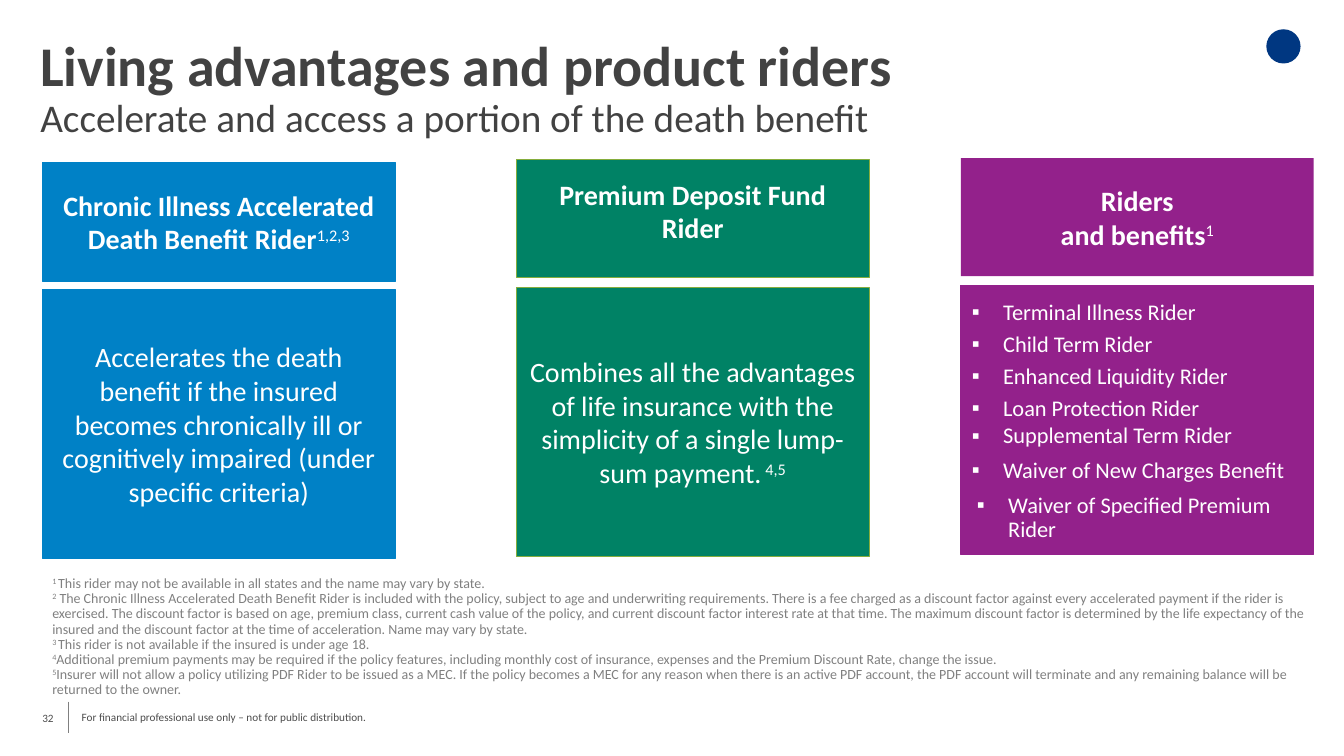
"""Build the slide on living advantages and product riders."""
from dataclasses import dataclass, field
from typing import Any

from lxml.etree import SubElement
from pptx import Presentation
from pptx.dml.color import RGBColor
from pptx.enum.shapes import MSO_CONNECTOR, MSO_SHAPE
from pptx.enum.text import MSO_ANCHOR, MSO_AUTO_SIZE, PP_ALIGN
from pptx.oxml.ns import qn
from pptx.util import Inches, Pt

SLIDE_W, SLIDE_H = Inches(13.33), Inches(7.5)


@dataclass(frozen=True)
class Theme:
    font: str = "Calibri"
    white: str = "FFFFFF"
    heading: str = "424242"
    footer: str = "4D4D4D"
    grey: str = "808080"
    navy: str = "003781"
    blue: str = "0081C6"
    green: str = "008265"
    olive: str = "85AD3D"
    purple: str = "93218B"
    title_size: int = 40
    subtitle_size: int = 28
    card_size: int = 20
    list_size: int = 16
    note_size: int = 10
    footer_size: int = 8
    outline: float = 0.85
    rule: float = 0.75


THEME = Theme()


@dataclass(frozen=True)
class Area:
    """Hold a place as percentages of the slide's width and height."""
    x: float
    y: float
    w: float
    h: float

    def emu(self) -> tuple[int, int, int, int]:
        return (round(SLIDE_W * self.x / 100), round(SLIDE_H * self.y / 100),
                round(SLIDE_W * self.w / 100), round(SLIDE_H * self.h / 100))


@dataclass(frozen=True)
class Span:
    text: str
    size: float
    color: str = THEME.white
    bold: bool = False
    raised: bool = False


@dataclass(frozen=True)
class Para:
    spans: list[Span]
    format: dict[str, Any] = field(default_factory=dict)
    indent: float = 0


@dataclass(frozen=True)
class Card:
    area: Area
    fill: str
    line: str | None
    paras: list[Para]
    frame: dict[str, Any] = field(default_factory=dict)


@dataclass(frozen=True)
class Rider:
    name: str
    space: float
    indent: float = 0.31


def assign(target: Any, values: dict[str, Any]) -> None:
    """Set each format value on the target."""
    for name, value in values.items():
        setattr(target, name, value)


def add_bullet(paragraph: Any, indent: float) -> None:
    """Give a paragraph a square bullet with a hanging indent."""
    props = paragraph._p.get_or_add_pPr()
    props.set("marL", str(Inches(indent)))
    props.set("indent", str(-Inches(0.31)))
    SubElement(props, qn("a:buChar")).set("char", "▪")


def write(shape: Any, paras: list[Para], frame: dict[str, Any]) -> None:
    """Fill a shape with formatted paragraphs."""
    text_frame = shape.text_frame
    assign(text_frame, {"word_wrap": True, "auto_size": MSO_AUTO_SIZE.NONE} | frame)
    for index, para in enumerate(paras):
        paragraph = text_frame.add_paragraph() if index else text_frame.paragraphs[0]
        if para.indent:
            add_bullet(paragraph, para.indent)
        assign(paragraph, para.format)
        for span in para.spans:
            if span.text == "\n":
                paragraph.add_line_break()
                continue
            run = paragraph.add_run()
            run.text = span.text
            assign(run.font, {"name": THEME.font, "size": Pt(span.size), "bold": span.bold})
            run.font.color.rgb = RGBColor.from_string(span.color)
            if span.raised:
                run._r.get_or_add_rPr().set("baseline", "30000")


def paint(shape: Any, fill: str, line: str | None) -> None:
    """Set a shape's fill and outline."""
    shape.fill.solid()
    shape.fill.fore_color.rgb = RGBColor.from_string(fill)
    if line is None:
        shape.line.fill.background()
        return
    shape.line.color.rgb = RGBColor.from_string(line)
    shape.line.width = Pt(THEME.outline)


def place(shape: Any, area: Area) -> None:
    """Move a placeholder to an area."""
    assign(shape, dict(zip(("left", "top", "width", "height"), area.emu())))


def add_card(slide: Any, card: Card) -> None:
    """Draw one filled rectangle with its text."""
    shape = slide.shapes.add_shape(MSO_SHAPE.RECTANGLE, *card.area.emu())
    shape.shadow.inherit = False
    paint(shape, card.fill, card.line)
    write(shape, card.paras, {"vertical_anchor": MSO_ANCHOR.MIDDLE} | card.frame)


def add_text(slide: Any, area: Area, paras: list[Para], frame: dict[str, Any]) -> None:
    """Add a text box."""
    write(slide.shapes.add_textbox(*area.emu()), paras, frame)


def centred(text: str, mark: str = "", bold: bool = False) -> Para:
    """Make a centred card paragraph with an optional note mark."""
    spans = [Span(text, THEME.card_size, bold=bold)]
    if mark:
        spans.append(Span(mark, THEME.card_size, raised=True))
    return Para(spans, {"alignment": PP_ALIGN.CENTER})


COL_X, COL_W, HEAD_H, BODY_H = (3.15, 38.41, 71.49), 26.26, 15.6, 35.6
CARDS = [
    Card(Area(COL_X[0], 21.47, COL_W, 15.73), THEME.blue, THEME.blue,
         [centred("Chronic Illness Accelerated Death Benefit Rider", "1,2,3", True)]),
    Card(Area(COL_X[1], 21.07, COL_W, HEAD_H), THEME.green, THEME.olive,
         [centred("Premium Deposit Fund Rider", bold=True)], {"margin_bottom": Inches(0.2)}),
    Card(Area(COL_X[2], 20.93, COL_W, HEAD_H), THEME.purple, None,
         [centred("Riders", bold=True), centred("and benefits", "1", True)]),
    Card(Area(COL_X[0], 38.27, COL_W, BODY_H), THEME.blue, THEME.blue,
         [centred("Accelerates the death benefit if the insured becomes chronically ill "
                  "or cognitively impaired (under specific criteria)")]),
    Card(Area(COL_X[1], 38, COL_W, BODY_H), THEME.green, THEME.olive,
         [centred("Combines all the advantages of life insurance with the simplicity "
                  "of a single lump-sum payment.", " 4,5")]),
]
RIDERS = [
    Rider("Terminal Illness Rider", 0), Rider("Child Term Rider", 5.5),
    Rider("Enhanced Liquidity Rider", 5.5), Rider("Loan Protection Rider", 5.5),
    Rider("Supplemental Term Rider", 2.5), Rider("Waiver of New Charges Benefit", 7.5),
    Rider("Waiver of Specified Premium Rider", 7.5, 0.36),
]
NOTES = [
    ("1 ", "This rider may not be available in all states and the name may vary by state."),
    ("2", " The Chronic Illness Accelerated Death Benefit Rider is included with the policy, subject to age and underwriting requirements. There is a fee charged as a discount factor against every accelerated payment if the rider is exercised. The discount factor is based on age, premium class, current cash value of the policy, and current discount factor interest rate at that time. The maximum discount factor is determined by the life expectancy of the insured and the discount factor at the time of acceleration. Name may vary by state."),
    ("3 ", "This rider is not available if the insured is under age 18."),
    ("4", "Additional premium payments may be required if the policy features, including monthly cost of insurance, expenses and the Premium Discount Rate, change the issue."),
    ("5", "Insurer will not allow a policy utilizing PDF Rider to be issued as a MEC. If the policy becomes a MEC for any reason when there is an active PDF account, the PDF account will terminate and any remaining balance will be returned to the owner."),
]


def add_footer(slide: Any) -> None:
    """Draw the page number, its divider and the use notice."""
    margins = {"margin_left": 0, "margin_top": Inches(0.06), "margin_bottom": Inches(0.06)}
    for area, text, anchor in (
            (Area(6.08, 93.2, 89.35, 3.47),
             "For financial professional use only – not for public distribution.", MSO_ANCHOR.TOP),
            (Area(3.15, 92.27, 3, 5.33), "32", MSO_ANCHOR.MIDDLE)):
        add_text(slide, area, [Para([Span(text, THEME.footer_size, THEME.footer)])],
                 margins | {"margin_right": 0, "vertical_anchor": anchor})
    x, y, _, length = Area(5.1, 92.8, 0, 4.13).emu()
    divider = slide.shapes.add_connector(MSO_CONNECTOR.STRAIGHT, x, y, x, y + length)
    divider.line.color.rgb = RGBColor.from_string(THEME.grey)
    divider.line.width = Pt(THEME.rule)
    SubElement(divider._element.spPr, qn("a:effectLst"))


def main() -> None:
    """Compose and save the slide."""
    deck = Presentation()
    assign(deck, {"slide_width": SLIDE_W, "slide_height": SLIDE_H})
    slide = deck.slides.add_slide(deck.slide_layouts[1])
    title, rider_list = slide.placeholders
    place(title, Area(2.25, 4.4, 89.87, 14.53))
    write(title, [Para([
        Span("Living advantages and product riders", THEME.title_size, THEME.heading, True),
        Span("\n", THEME.title_size),
        Span("Accelerate and access a portion of the death benefit", THEME.subtitle_size, THEME.heading),
    ], {"alignment": PP_ALIGN.LEFT, "line_spacing": 0.9})], {"vertical_anchor": MSO_ANCHOR.TOP})
    place(rider_list, Area(COL_X[2], 37.73, COL_W, BODY_H))
    paint(rider_list, THEME.purple, THEME.purple)
    write(rider_list, [Para([Span(rider.name, THEME.list_size)],
                            {"line_spacing": 0.9, "space_before": Pt(rider.space)}, rider.indent)
                       for rider in RIDERS],
          {"margin_left": Inches(0.11), "margin_top": Inches(0.16), "vertical_anchor": MSO_ANCHOR.TOP})
    for card in CARDS:
        add_card(slide, card)
    add_text(slide, Area(3.15, 75.6, 95.72, 16.8), [
        Para([Span(mark, THEME.note_size, THEME.grey, raised=True),
              Span(note, THEME.note_size, THEME.grey)], {"line_spacing": 0.9})
        for mark, note in NOTES], {})
    emblem = slide.shapes.add_shape(MSO_SHAPE.OVAL, *Area(94.22, 3.87, 2.55, 4.53).emu())
    emblem.shadow.inherit = False
    paint(emblem, THEME.navy, None)
    add_footer(slide)
    deck.save("out.pptx")


if __name__ == "__main__":
    main()
